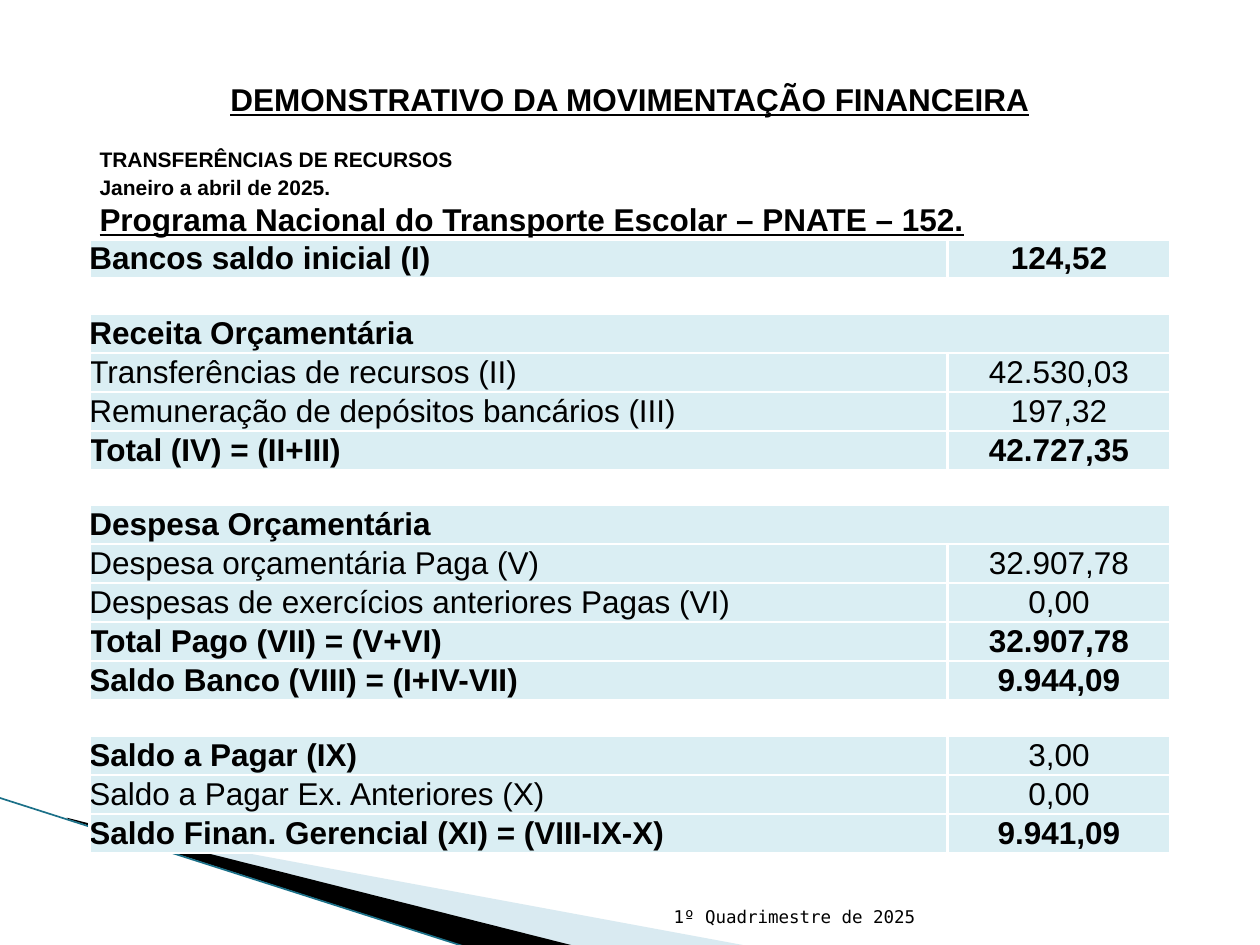
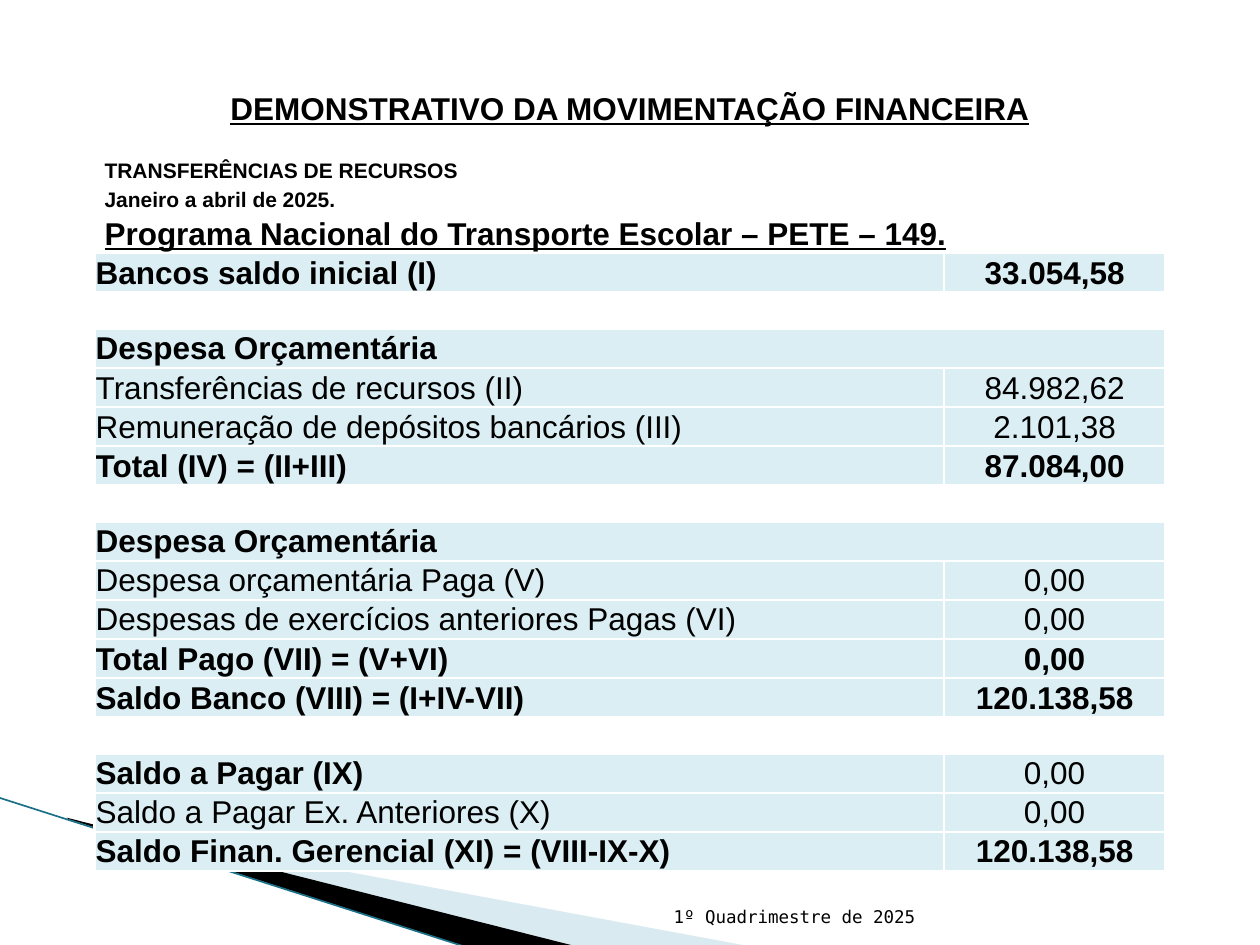
from lxml.etree import SubElement
from pptx import Presentation
from pptx.dml.color import RGBColor
from pptx.enum.shapes import MSO_CONNECTOR
from pptx.enum.text import MSO_ANCHOR, PP_ALIGN
from pptx.oxml.ns import qn
from pptx.util import Inches, Pt

# Content
TITLE = "DEMONSTRATIVO DA MOVIMENTAÇÃO FINANCEIRA"
TOPIC = "TRANSFERÊNCIAS DE RECURSOS"
PERIOD = "Janeiro a abril de 2025."
FOOTER = "1º Quadrimestre de 2025"

# Line label, bold label, bold value; None leaves a gap
LINES = [
    ("Bancos saldo inicial (I)", True, True),
    None,
    "income",
    ("Transferências de recursos (II)", False, False),
    ("Remuneração de depósitos bancários (III)", False, False),
    ("Total (IV) = (II+III)", True, True),
    None,
    "Despesa Orçamentária",
    ("Despesa orçamentária Paga (V)", False, False),
    ("Despesas de exercícios anteriores Pagas (VI)", False, False),
    ("Total Pago (VII) = (V+VI)", True, True),
    ("Saldo Banco (VIII) = (I+IV-VII)", True, True),
    None,
    ("Saldo a Pagar (IX)", True, False),
    ("Saldo a Pagar Ex. Anteriores (X)", False, False),
    ("Saldo Finan. Gerencial (XI) = (VIII-IX-X)", True, True),
]

REPORTS = [
    {
        "program": "Programa Nacional do Transporte Escolar – PNATE – 152.",
        "income": "Receita Orçamentária",
        "values": ["124,52", "42.530,03", "197,32", "42.727,35", "32.907,78", "0,00",
                   "32.907,78", "9.944,09", "3,00", "0,00", "9.941,09"],
        "place": (0.71, 0.44), "cols": (6.81, 1.77), "inset": 0,
        "heights": {"pad": 0.21, "title": 0.29, "sub": 0.22, "head": 0.3,
                    "gap": 0.28, "line": 0.31},
    },
    {
        "program": "Programa Nacional do Transporte Escolar – PETE – 149.",
        "income": "Despesa Orçamentária",
        "values": ["33.054,58", "84.982,62", "2.101,38", "87.084,00", "0,00", "0,00",
                   "0,00", "120.138,58", "0,00", "0,00", "120.138,58"],
        "place": (0.75, 0.49), "cols": (6.74, 1.76), "inset": 0.01,
        "heights": {"pad": 0.22, "title": 0.29, "sub": 0.23, "head": 0.3,
                    "gap": 0.29, "line": 0.31},
    },
]

# Shared look
COLORS = {"white": "FFFFFF", "black": "000000", "row": "DAEEF3",
          "wedge": "A0CBDC", "edge": "1B7088"}
WEDGES = [
    ("wedge", 40, [(0.55, 6.51), (5.95, 7.51), (4.56, 7.51), (0.55, 6.5)]),
    ("black", 100, [(0.53, 6.49), (4.57, 7.51), (3.72, 7.52), (0.54, 6.5)]),
]
EDGE = (-0.01, 6.33, 3.71, 7.52)
BASE = {"name": "Arial", "size": Pt(18), "bold": True, "underline": False}
INDENT = 0.08


def color(name):
    return RGBColor.from_string(COLORS[name])


def style(run, **extra):
    for key, value in {**BASE, **extra}.items():
        setattr(run.font, key, value)
    run.font.color.rgb = color("black")


def backdrop(slide):
    # Corner wedges, edge line and footer
    for name, alpha, points in WEDGES:
        spots = [(Inches(x), Inches(y)) for x, y in points]
        build = slide.shapes.build_freeform(*spots[0], scale=1.0)
        build.add_line_segments(spots[1:], close=True)
        shape = build.convert_to_shape()
        shape.shadow.inherit = False
        shape.fill.solid()
        shape.fill.fore_color.rgb = color(name)
        shape.line.fill.background()
        if alpha < 100:
            tone = shape._element.spPr.find(qn("a:solidFill"))[0]
            SubElement(tone, qn("a:alpha"), val=str(alpha * 1000))
    edge = slide.shapes.add_connector(MSO_CONNECTOR.STRAIGHT, *map(Inches, EDGE))
    edge.line.color.rgb = color("edge")
    edge.line.width = Pt(0.95)
    SubElement(edge._element.spPr, qn("a:effectLst"))

    box = slide.shapes.add_textbox(Inches(4.79), Inches(7.01), Inches(2.57), Inches(0.4))
    frame = box.text_frame
    frame.word_wrap = True
    frame.vertical_anchor = MSO_ANCHOR.BOTTOM
    para = frame.paragraphs[0]
    para.alignment = PP_ALIGN.RIGHT
    run = para.add_run()
    run.text = FOOTER
    style(run, name="DejaVu Sans Mono", size=Pt(10), bold=False)


def border(cell, drawn):
    props = cell._tc.get_or_add_tcPr()
    for i, side in enumerate(("lnL", "lnR", "lnT", "lnB")):
        line = props.makeelement(qn("a:" + side), {"w": str(Pt(1.5))})
        if drawn:
            fill = SubElement(line, qn("a:solidFill"))
            SubElement(fill, qn("a:srgbClr"), val=COLORS["white"])
        else:
            SubElement(line, qn("a:noFill"))
        props.insert(i, line)


def write(cell, text, align, **extra):
    cell.vertical_anchor = MSO_ANCHOR.MIDDLE
    para = cell.text_frame.paragraphs[0]
    para.alignment = align
    run = para.add_run()
    run.text = text
    style(run, **extra)


def plan(report):
    # One entry per row: kind, cells as (text, alignment, format)
    left, mid, full = PP_ALIGN.LEFT, PP_ALIGN.CENTER, PP_ALIGN.JUSTIFY
    small = {"size": Pt(12)}
    rows = [
        ("pad", []),
        ("title", [(TITLE, mid, {"underline": True})]),
        ("pad", []),
        ("sub", [(TOPIC, left, small)]),
        ("sub", [(PERIOD, left, small)]),
        ("head", [(report["program"], left, {"underline": True})]),
    ]
    values = iter(report["values"])
    for line in LINES:
        if line is None:
            rows.append(("gap", []))
        elif isinstance(line, str):
            rows.append(("line", [(report.get(line, line), left, {})]))
        else:
            label, strong, heavy = line
            rows.append(("line", [(label, full, {"bold": strong}),
                                  (next(values), mid, {"bold": heavy})]))
    return rows


def statement(slide, report):
    rows, heights = plan(report), report["heights"]
    total = sum(heights[kind] for kind, _ in rows)
    x, y = report["place"]
    table = slide.shapes.add_table(len(rows), 2, Inches(x), Inches(y),
                                   Inches(sum(report["cols"])), Inches(total)).table
    table.first_row = table.horz_banding = False
    for col, width in zip(table.columns, report["cols"]):
        col.width = Inches(width)

    for r, (kind, parts) in enumerate(rows):
        table.rows[r].height = Inches(heights[kind])
        pair = [table.cell(r, c) for c in range(2)]
        for cell in pair:
            inset = Inches(report["inset"])
            lead = Inches(INDENT) if kind in ("sub", "head") else inset
            margins = {"margin_left": lead, "margin_right": inset,
                       "margin_top": inset, "margin_bottom": 0}
            for key, value in margins.items():
                setattr(cell, key, value)
            if r == 0:
                cell.fill.background()
            else:
                cell.fill.solid()
                cell.fill.fore_color.rgb = color("row" if kind == "line" else "white")
            border(cell, kind in ("line", "gap"))
        if len(parts) == 1 or (kind == "pad" and r):
            pair[0].merge(pair[1])
        for cell, (text, align, extra) in zip(pair, parts):
            write(cell, text, align, **extra)
        # Small type keeps the empty rows low
        for cell in pair[len(parts):]:
            para = cell.text_frame.paragraphs[0]._p
            SubElement(para, qn("a:endParaRPr"), sz="800")


def main():
    deck = Presentation()
    deck.slide_width, deck.slide_height = Inches(10), Inches(7.5)
    for report in REPORTS:
        slide = deck.slides.add_slide(deck.slide_layouts[6])
        backdrop(slide)
        statement(slide, report)
    deck.save("out.pptx")


if __name__ == "__main__":
    main()
